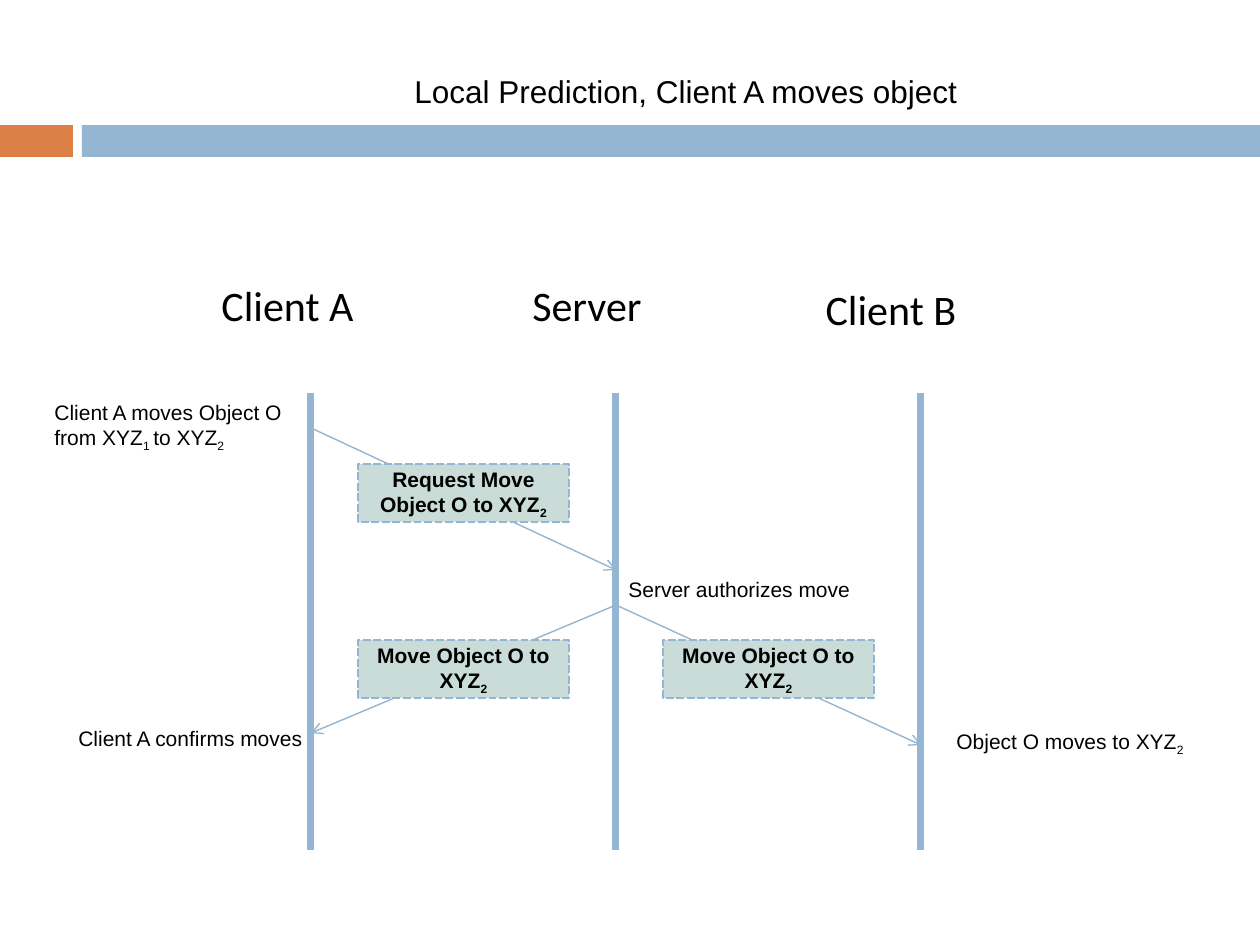
from lxml import etree
from pptx import Presentation
from pptx.dml.color import RGBColor
from pptx.enum.dml import MSO_LINE
from pptx.enum.shapes import MSO_CONNECTOR, MSO_SHAPE
from pptx.enum.text import MSO_ANCHOR as Anchor, MSO_AUTO_SIZE as AutoSize, PP_ALIGN as Align
from pptx.oxml.ns import qn
from pptx.util import Emu, Pt

BLUE = RGBColor(0x94, 0xB6, 0xD2)
ORANGE = RGBColor(0xDD, 0x80, 0x47)
SAGE = RGBColor(0xCA, 0xDC, 0xD8)
BLACK = RGBColor(0, 0, 0)

PX_PER_INCH = 126
LANE_GAP = 305
CLIENT_A, SERVER, CLIENT_B = (311 + LANE_GAP * lane for lane in range(3))
LANE_TOP, LANE_BOTTOM = 393, 850
MESSAGE_OFFSET = 47
MESSAGE_WIDTH, MESSAGE_HEIGHT = 211, 58
NOTE_WIDTH = 270


def px(length):
    return Emu(round(length * 914400 / PX_PER_INCH))


class SequenceSlide:
    body_font = "Arial"
    heading_font = "Calibri"

    def __init__(self, presentation):
        self.slide = presentation.slides.add_slide(presentation.slide_layouts[6])
        self.shapes = self.slide.shapes

    def set_text(self, frame, text, size, font=None, align=Align.LEFT, bold=False):
        paragraph = frame.paragraphs[0]
        paragraph.alignment = align
        paragraph.font.name = font or self.body_font
        paragraph.font.size = Pt(size)
        paragraph.font.bold = bold
        paragraph.font.color.rgb = BLACK
        for index, piece in enumerate(text.split("_")):
            if piece:
                run = paragraph.add_run()
                run.text = piece
                if index % 2:
                    run._r.get_or_add_rPr().set("baseline", "-25000")

    def rectangle(self, left, top, width, height, fill):
        shape = self.shapes.add_shape(
            MSO_SHAPE.RECTANGLE, px(left), px(top), px(width), px(height))
        shape.shadow.inherit = False
        shape.fill.solid()
        shape.fill.fore_color.rgb = fill
        shape.line.fill.background()
        return shape

    def message(self, lane, top, text):
        shape = self.rectangle(
            lane + MESSAGE_OFFSET, top, MESSAGE_WIDTH, MESSAGE_HEIGHT, SAGE)
        shape.line.color.rgb = BLUE
        shape.line.width = Pt(1.5)
        shape.line.dash_style = MSO_LINE.SQUARE_DOT
        shape.text_frame.word_wrap = True
        shape.text_frame.vertical_anchor = Anchor.MIDDLE
        self.set_text(shape.text_frame, text, 12, align=Align.CENTER, bold=True)

    def text(self, left, top, width, height, text, size=12, wrap=True, **style):
        box = self.shapes.add_textbox(px(left), px(top), px(width), px(height))
        frame = box.text_frame
        frame.word_wrap = wrap
        frame.auto_size = AutoSize.SHAPE_TO_FIT_TEXT
        self.set_text(frame, text, size, **style)

    def heading(self, left, top, width, text):
        self.text(left, top, width, 63, text, 24,
                  font=self.heading_font, align=Align.CENTER)

    def line(self, x1, y1, x2, y2, weight):
        connector = self.shapes.add_connector(
            MSO_CONNECTOR.STRAIGHT, px(x1), px(y1), px(x2), px(y2))
        connector.line.color.rgb = BLUE
        connector.line.width = Pt(weight)
        etree.SubElement(connector._element.spPr, qn("a:effectLst"))
        return connector

    def lifeline(self, lane):
        self.line(lane, LANE_TOP, lane, LANE_BOTTOM, 4)

    def arrow(self, x1, y1, x2, y2):
        connector = self.line(x1, y1, x2, y2, 0.79)
        outline = connector._element.spPr.find(qn("a:ln"))
        etree.SubElement(outline, qn("a:tailEnd"), type="arrow")


def main():
    presentation = Presentation()
    presentation.slide_width = px(1260)
    presentation.slide_height = px(945)
    page = SequenceSlide(presentation)

    page.rectangle(0, 125, 73, 32, ORANGE)
    page.rectangle(82, 125, 1178, 32, BLUE)

    page.arrow(CLIENT_A, 428, SERVER, 570)
    for lane in (CLIENT_A, SERVER, CLIENT_B):
        page.lifeline(lane)
    page.heading(159, 273, 257, "Client A")
    page.heading(417, 273, 340, "Server")
    page.heading(721, 277, 340, "Client B")

    page.arrow(SERVER, 605, CLIENT_A, 733)
    page.arrow(SERVER, 605, CLIENT_B, 745)
    page.message(CLIENT_A, 464, "Request Move Object O to XYZ_2")
    for lane in (CLIENT_A, SERVER):
        page.message(lane, 640, "Move Object O to XYZ_2")

    page.text(42, 393, NOTE_WIDTH, 63, "Client A moves Object O from XYZ_1 _to XYZ_2")
    page.text(66, 719, NOTE_WIDTH, 38, "Client A confirms moves")
    page.text(944, 722, NOTE_WIDTH, 38, "Object O moves to XYZ_2")
    page.text(SERVER, 570, NOTE_WIDTH, 38, "Server authorizes move")
    page.text(402, 66, 573, 50, "Local Prediction, Client A moves object", 18, wrap=False)

    presentation.save("out.pptx")


if __name__ == "__main__":
    main()
